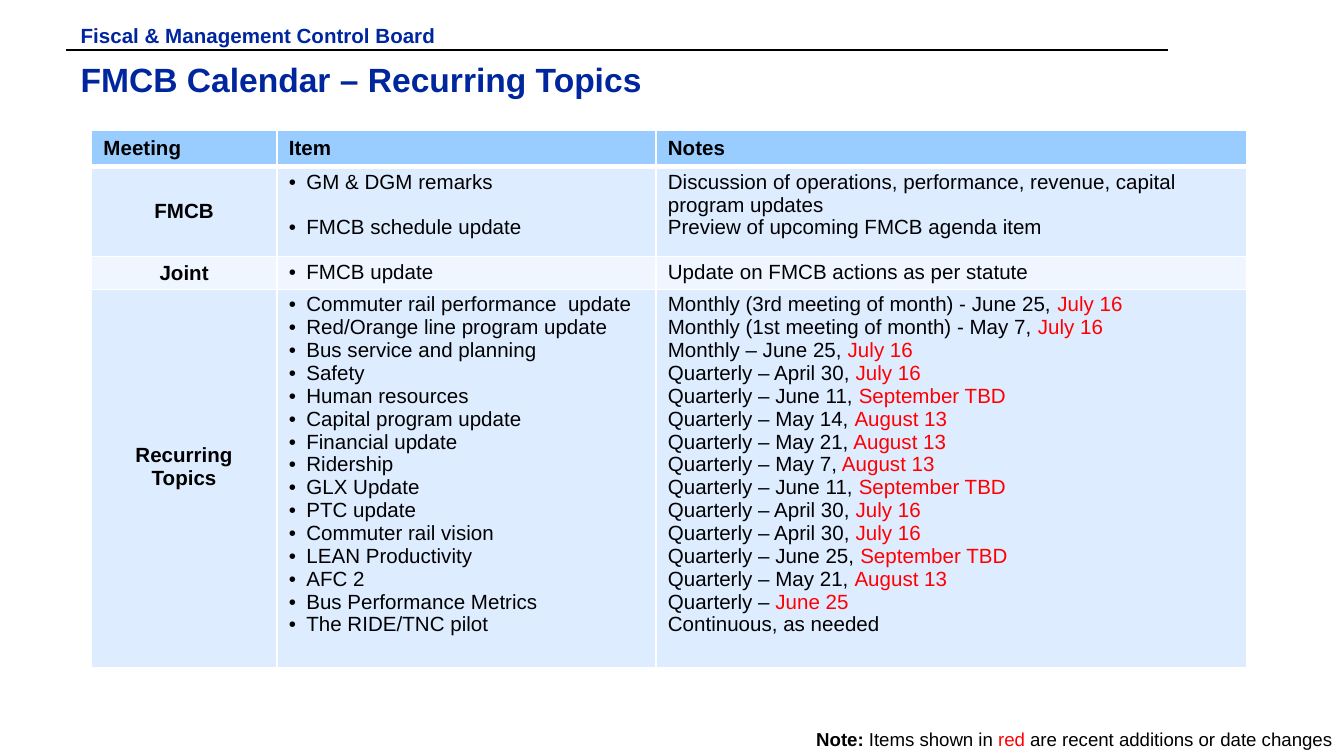
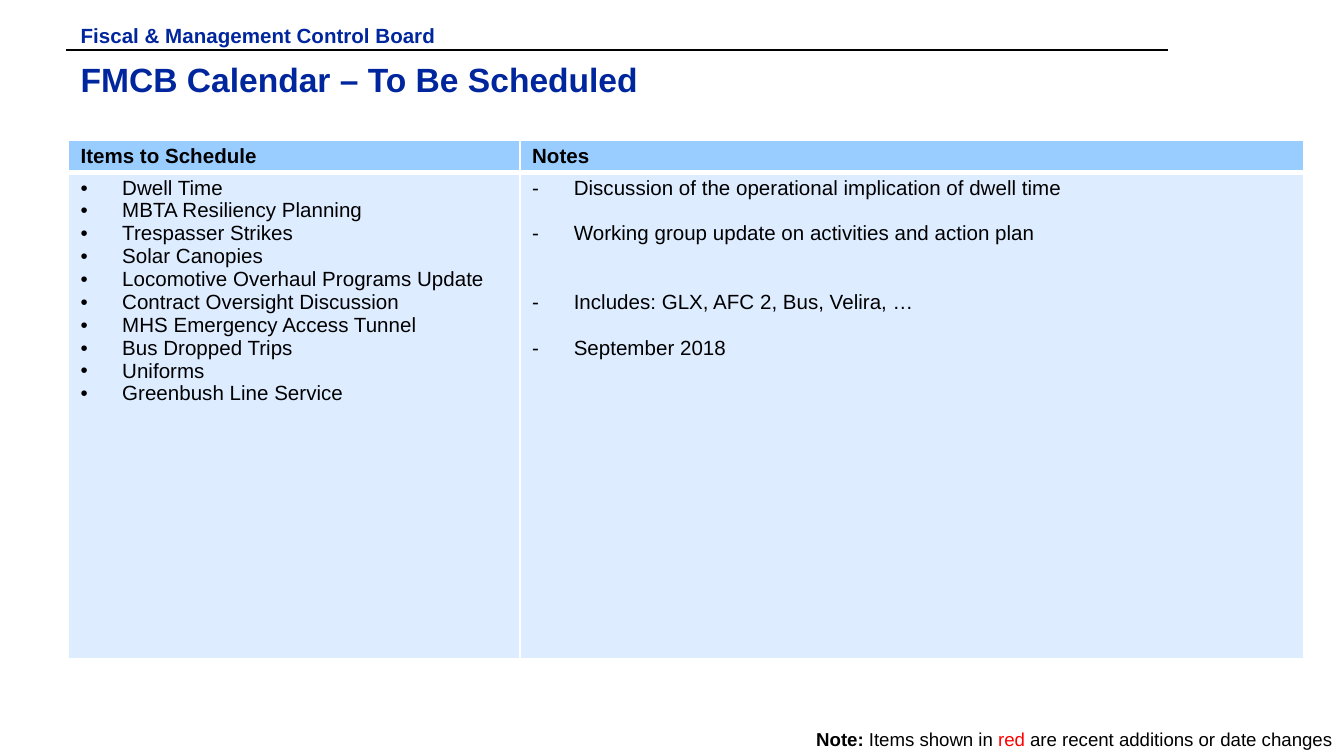
from dataclasses import dataclass

from lxml import etree
from pptx import Presentation
from pptx.dml.color import RGBColor
from pptx.enum.shapes import MSO_CONNECTOR
from pptx.enum.text import MSO_ANCHOR, PP_ALIGN
from pptx.oxml.ns import qn
from pptx.util import Inches, Pt

LEFT, CENTER, RIGHT = PP_ALIGN.LEFT, PP_ALIGN.CENTER, PP_ALIGN.RIGHT
TOP, MIDDLE = MSO_ANCHOR.TOP, MSO_ANCHOR.MIDDLE
STRAIGHT = MSO_CONNECTOR.STRAIGHT


@dataclass(frozen=True)
class Theme:
    font: str = "Arial"
    navy: str = "00269E"
    black: str = "000000"
    red: str = "FF0000"
    white: str = "FFFFFF"
    head: str = "99CCFF"
    band: str = "DEECFF"
    light: str = "EFF6FF"
    title: float = 18
    body: float = 11
    note: float = 10
    line_gap: float = 12.25


T = Theme()

BOARD = "Fiscal & Management Control Board"
NOTE = [
    ("Note: ", T.black, True),
    ("Items shown in ", T.black, False),
    ("red", T.red, False),
    (" are recent additions or date changes", T.black, False),
]

RECURRING = [
    ("Commuter rail performance  update", "Monthly (3rd meeting of month) - June 25, ", "July 16"),
    ("Red/Orange line program update", "Monthly (1st meeting of month) - May 7, ", "July 16"),
    ("Bus service and planning", "Monthly – June 25, ", "July 16"),
    ("Safety", "Quarterly – April 30, ", "July 16"),
    ("Human resources", "Quarterly – June 11,", " September TBD"),
    ("Capital program update", "Quarterly – May 14, ", "August 13"),
    ("Financial update", "Quarterly – May 21,", " August 13"),
    ("Ridership", "Quarterly – May 7,", " August 13"),
    ("GLX Update", "Quarterly – June 11, ", "September TBD"),
    ("PTC update", "Quarterly – April 30, ", "July 16"),
    ("Commuter rail vision", "Quarterly – April 30, ", "July 16"),
    ("LEAN Productivity", "Quarterly – June 25, ", "September TBD"),
    ("AFC 2", "Quarterly – May 21, ", "August 13"),
    ("Bus Performance Metrics", "Quarterly –", " June 25"),
    ("The RIDE/TNC pilot", "Continuous, as needed", ""),
]


def label(*lines, bottom=0.03):
    return {"lines": lines, "bold": True, "align": CENTER, "anchor": MIDDLE, "bottom": bottom}


def heading(text):
    return {"lines": [text], "bold": True, "anchor": MIDDLE}


def bullets(*lines, mark="•", indent=0.13, gaps=None):
    return {"lines": lines, "mark": mark, "indent": indent, "gaps": gaps or {}}


SLIDES = [
    {
        "title": "FMCB Calendar – Recurring Topics",
        "at": (0.68, 0.97),
        "cols": (1.38, 2.82, 4.4),
        "rows": (0.27, 0.67, 0.23, 2.81),
        "fills": (T.head, T.band, T.light, T.band),
        "cells": [
            [heading("Meeting"), heading("Item"), heading("Notes")],
            [
                label("FMCB"),
                bullets("GM & DGM remarks", "FMCB schedule update", gaps={1: 1}),
                {"lines": [
                    "Discussion of operations, performance, revenue, capital program updates",
                    "Preview of upcoming FMCB agenda item",
                ]},
            ],
            [
                label("Joint"),
                bullets("FMCB update"),
                {"lines": ["Update on FMCB actions as per statute"]},
            ],
            [
                label("Recurring", "Topics", bottom=0.2),
                bullets(*[item for item, _, _ in RECURRING]),
                {"lines": [(when, update) for _, when, update in RECURRING]},
            ],
        ],
    },
    {
        "title": "FMCB Calendar – To Be Scheduled",
        "at": (0.51, 1.04),
        "cols": (3.36, 5.83),
        "rows": (0.22, 3.62),
        "fills": (T.head, T.band),
        "cells": [
            [heading("Items to Schedule"), heading("Notes")],
            [
                bullets(
                    "Dwell Time",
                    "MBTA Resiliency Planning",
                    "Trespasser Strikes",
                    "Solar Canopies",
                    "Locomotive Overhaul Programs Update",
                    "Contract Oversight Discussion",
                    "MHS Emergency Access Tunnel",
                    "Bus Dropped Trips",
                    "Uniforms",
                    "Greenbush Line Service",
                    indent=0.31,
                ),
                bullets(
                    "Discussion of the operational implication of dwell time",
                    "Working group update on activities and action plan",
                    "Includes: GLX, AFC 2, Bus, Velira, …",
                    "September 2018",
                    mark="-", indent=0.31, gaps={1: 1, 2: 2, 3: 1},
                ),
            ],
        ],
    },
]


def add_run(p, text, size, color=T.black, bold=False):
    r = p.add_run()
    r.text = text
    r.font.name = T.font
    r.font.size = Pt(size)
    r.font.bold = bold
    r.font.color.rgb = RGBColor.from_string(color)


def add_text(s, at, runs, size, align=LEFT, inset_top=0.04):
    tf = s.shapes.add_textbox(*map(Inches, at)).text_frame
    tf.word_wrap = True
    tf.vertical_anchor = TOP
    tf.margin_left = tf.margin_right = Inches(0.09)
    tf.margin_top, tf.margin_bottom = Inches(inset_top), Inches(0.04)
    p = tf.paragraphs[0]
    p.alignment = align
    for text, color, bold in runs:
        add_run(p, text, size, color, bold)


def add_bullet(p, mark, indent):
    pPr = p._p.get_or_add_pPr()
    pPr.set("marL", str(Inches(indent)))
    pPr.set("indent", str(-Inches(indent)))
    etree.SubElement(pPr, qn("a:buFont")).set("typeface", T.font)
    etree.SubElement(pPr, qn("a:buChar")).set("char", mark)


def set_borders(cell, widths):
    tcPr = cell._tc.get_or_add_tcPr()
    for i, (side, width) in enumerate(widths.items()):
        ln = etree.Element(qn(f"a:ln{side}"), w=str(Pt(width)))
        fill = etree.SubElement(ln, qn("a:solidFill"))
        etree.SubElement(fill, qn("a:srgbClr")).set("val", T.white)
        tcPr.insert(i, ln)


def fill_cell(cell, content, color, widths):
    cell.margin_left = cell.margin_right = Inches(0.09)
    cell.margin_top = Inches(0.03)
    cell.margin_bottom = Inches(content.get("bottom", 0.03))
    cell.vertical_anchor = content.get("anchor", TOP)
    cell.fill.solid()
    cell.fill.fore_color.rgb = RGBColor.from_string(color)
    set_borders(cell, widths)
    tf = cell.text_frame
    gaps = content.get("gaps", {})
    for i, line in enumerate(content["lines"]):
        p = tf.add_paragraph() if i else tf.paragraphs[0]
        p.alignment = content.get("align", LEFT)
        if i in gaps:
            p.space_before = Pt(gaps[i] * T.line_gap)
        if "mark" in content:
            add_bullet(p, content["mark"], content["indent"])
        plain, update = (line, "") if isinstance(line, str) else line
        add_run(p, plain, T.body, bold=content.get("bold", False))
        if update:
            add_run(p, update, T.body, T.red)


def add_calendar(s, page):
    cols, rows = page["cols"], page["rows"]
    box = map(Inches, (*page["at"], sum(cols), sum(rows)))
    table = s.shapes.add_table(len(rows), len(cols), *box).table
    table.horz_banding = False
    for c, width in enumerate(cols):
        table.columns[c].width = Inches(width)
    for r, height in enumerate(rows):
        table.rows[r].height = Inches(height)
        widths = {"L": 1, "R": 1, "T": 3 if r == 1 else 1, "B": 3 if r == 0 else 1}
        for c, content in enumerate(page["cells"][r]):
            fill_cell(table.cell(r, c), content, page["fills"][r], widths)


def add_frame(s, title):
    rule = s.shapes.add_connector(STRAIGHT, *map(Inches, (0.49, 0.37, 8.69, 0.37)))
    rule.line.color.rgb = RGBColor.from_string(T.black)
    rule.line.width = Pt(1)
    etree.SubElement(rule._element.spPr, qn("a:effectLst"))
    add_text(s, (0.51, 0.4, 8.36, 0.48), [(title, T.navy, True)], T.title)
    add_text(s, (0.51, 0.12, 3.41, 0.19), [(BOARD, T.navy, True)], T.body, inset_top=0.05)
    add_text(s, (5.8, 5.37, 4.2, 0.26), NOTE, T.note, RIGHT, inset_top=0.05)


def main():
    prs = Presentation()
    prs.slide_width = Inches(10)
    prs.slide_height = prs.slide_width * 9 // 16
    for page in SLIDES:
        s = prs.slides.add_slide(prs.slide_layouts[6])
        add_frame(s, page["title"])
        add_calendar(s, page)
    prs.save("out.pptx")


if __name__ == "__main__":
    main()
